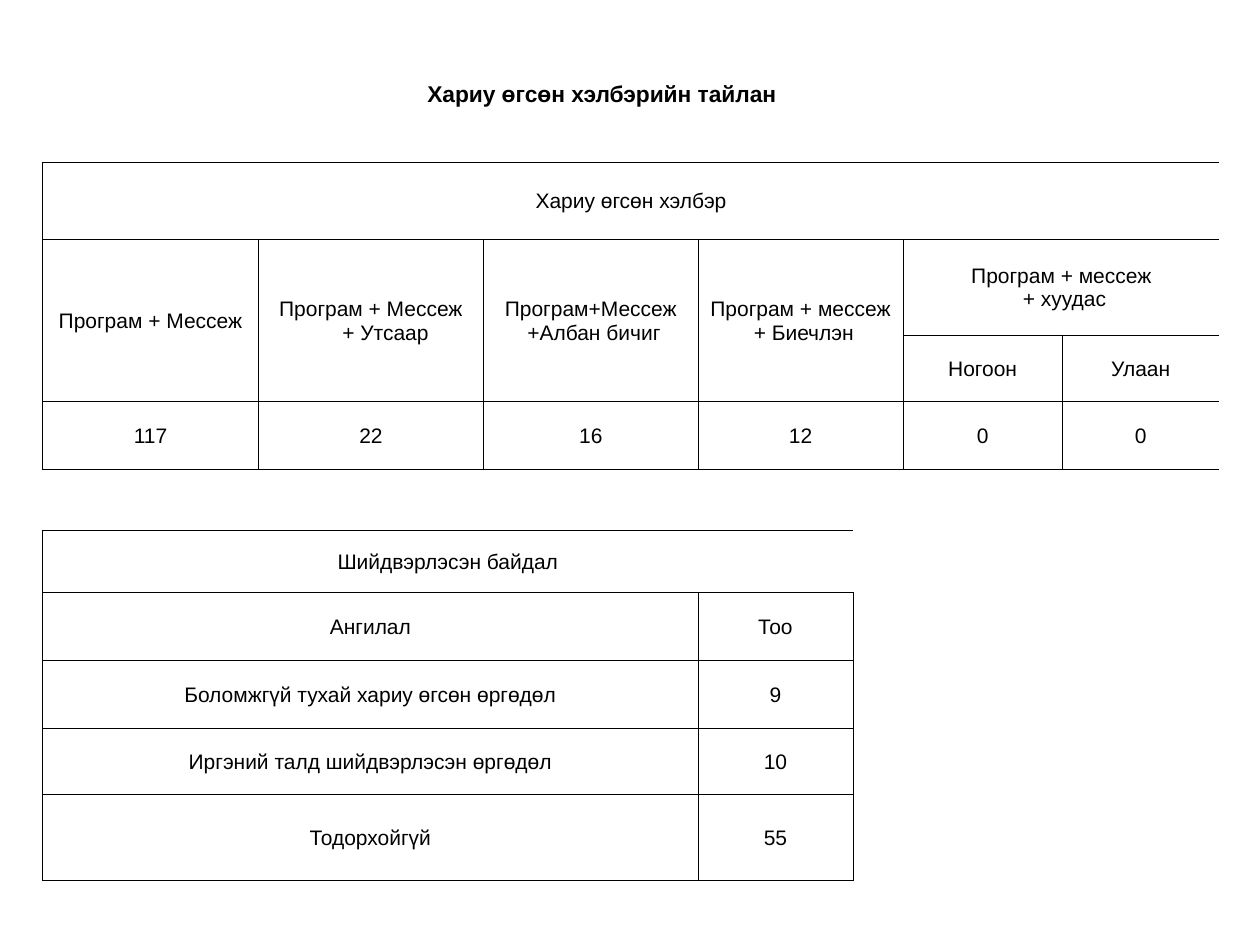
from dataclasses import dataclass

from lxml import etree
from pptx import Presentation
from pptx.dml.color import RGBColor
from pptx.enum.text import MSO_ANCHOR, PP_ALIGN
from pptx.oxml.ns import qn
from pptx.table import Table, _Cell
from pptx.util import Inches, Pt

MIDDLE = MSO_ANCHOR.MIDDLE
CENTER = PP_ALIGN.CENTER
FONT = "Arial"
BLACK = "000000"
WHITE = "FFFFFF"
NO_GRID_STYLE = "{2D5ABB26-0587-4C30-8999-92F81FD0307C}"
COLUMN_WIDTHS = [1.08, 0.16, 0.47, 1.79, 1.7, 1.23, 0.4, 0.57, 0.39, 0.3, 0.86, 0.39]
ROW_HEIGHTS = [0.63, 0.23, 0.61, 0.76, 0.53, 0.54, 0.48, 0.49, 0.54, 0.54, 0.53, 0.68]
CELL_FORMAT = {
    "vertical_anchor": MIDDLE,
    "margin_left": Inches(0.01),
    "margin_right": Inches(0.01),
    "margin_top": Inches(0.01),
    "margin_bottom": 0,
}


@dataclass
class Entry:
    row: int
    column: int
    text: str
    columns: int = 1
    rows: int = 1
    indent: float = 0.05
    size: int = 12
    bold: bool = False
    bordered: bool = True


REPLY_HEADINGS = [
    Entry(2, 0, "Хариу өгсөн хэлбэр", 12),
    Entry(3, 0, "Програм + Мессеж", 3, 2),
    Entry(3, 3, "Програм + Мессеж\n+ Утсаар", 1, 2, indent=0.23),
    Entry(3, 4, "Програм+Мессеж\n+Албан бичиг", 1, 2),
    Entry(3, 5, "Програм + мессеж\n+ Биечлэн", 2, 2),
    Entry(3, 7, "Програм + мессеж\n+ хуудас", 5),
    Entry(4, 7, "Ногоон", 3),
    Entry(4, 10, "Улаан", 2),
]
REPLY_COUNTS = [
    (0, 3, "117"), (3, 1, "22"), (4, 1, "16"),
    (5, 2, "12"), (7, 3, "0"), (10, 2, "0"),
]
OUTCOMES = [
    ("Ангилал", "Тоо"),
    ("Боломжгүй тухай хариу өгсөн өргөдөл", "9"),
    ("Иргэний талд шийдвэрлэсэн өргөдөл", "10"),
    ("Тодорхойгүй", "55"),
]


def color(value: str) -> RGBColor:
    return RGBColor.from_string(value)


def apply(target: object, values: dict) -> None:
    for name, value in values.items():
        setattr(target, name, value)


def add_border(cell: _Cell, side: str) -> None:
    properties = cell._tc.get_or_add_tcPr()
    line = etree.SubElement(properties, qn(f"a:ln{side}"), w=str(Pt(0.5)))
    fill = etree.SubElement(line, qn("a:solidFill"))
    etree.SubElement(fill, qn("a:srgbClr"), val=BLACK)


def outline(table: Table, entry: Entry) -> None:
    last_row = entry.row + entry.rows - 1
    last_column = entry.column + entry.columns - 1
    for row in range(entry.row, last_row + 1):
        for column in range(entry.column, last_column + 1):
            edges = {
                "L": column == entry.column,
                "R": column == last_column,
                "T": row == entry.row,
                "B": row == last_row,
            }
            for side, on_edge in edges.items():
                if on_edge:
                    add_border(table.cell(row, column), side)


def write_entry(table: Table, entry: Entry) -> None:
    cell = table.cell(entry.row, entry.column)
    if entry.columns * entry.rows > 1:
        cell.merge(table.cell(entry.row + entry.rows - 1, entry.column + entry.columns - 1))
    if entry.bordered:
        outline(table, entry)
    for number, line in enumerate(entry.text.split("\n")):
        para = cell.text_frame.add_paragraph() if number else cell.text_frame.paragraphs[0]
        para.alignment = CENTER
        if number:
            para._p.get_or_add_pPr().set("marL", str(Inches(entry.indent)))
        span = para.add_run()
        span.text = line
        apply(span.font, {"name": FONT, "size": Pt(entry.size), "bold": entry.bold})
        span.font.color.rgb = color(BLACK)


def finish_cell(cell: _Cell) -> None:
    apply(cell, CELL_FORMAT)
    cell.fill.solid()
    cell.fill.fore_color.rgb = color(WHITE)
    if not cell.text_frame.text:
        para = cell.text_frame.paragraphs[0]
        etree.SubElement(para._p, qn("a:endParaRPr"), sz="800")


def main() -> None:
    deck = Presentation()
    apply(deck, {"slide_width": Inches(10), "slide_height": Inches(7.5)})
    page = deck.slides.add_slide(deck.slide_layouts[6])
    frame = page.shapes.add_table(
        len(ROW_HEIGHTS), len(COLUMN_WIDTHS),
        Inches(0.34), Inches(0.43), Inches(9.35), Inches(6.55),
    )
    table = frame.table
    apply(table, {"first_row": False, "horz_banding": False})
    table._tbl.tblPr.find(qn("a:tableStyleId")).text = NO_GRID_STYLE
    for column, width in zip(table.columns, COLUMN_WIDTHS):
        column.width = Inches(width)
    for row, height in zip(table.rows, ROW_HEIGHTS):
        row.height = Inches(height)

    entries = [Entry(0, 1, "Хариу өгсөн хэлбэрийн тайлан", 8, size=13, bold=True, bordered=False)]
    entries += REPLY_HEADINGS
    entries += [Entry(5, column, count, columns) for column, columns, count in REPLY_COUNTS]
    entries.append(Entry(7, 0, "Шийдвэрлэсэн байдал", 6))
    for row, (label, count) in enumerate(OUTCOMES, start=8):
        entries += [Entry(row, 0, label, 5), Entry(row, 5, count)]
    for entry in entries:
        write_entry(table, entry)
    for cell in table.iter_cells():
        finish_cell(cell)
    deck.save("out.pptx")


if __name__ == "__main__":
    main()
